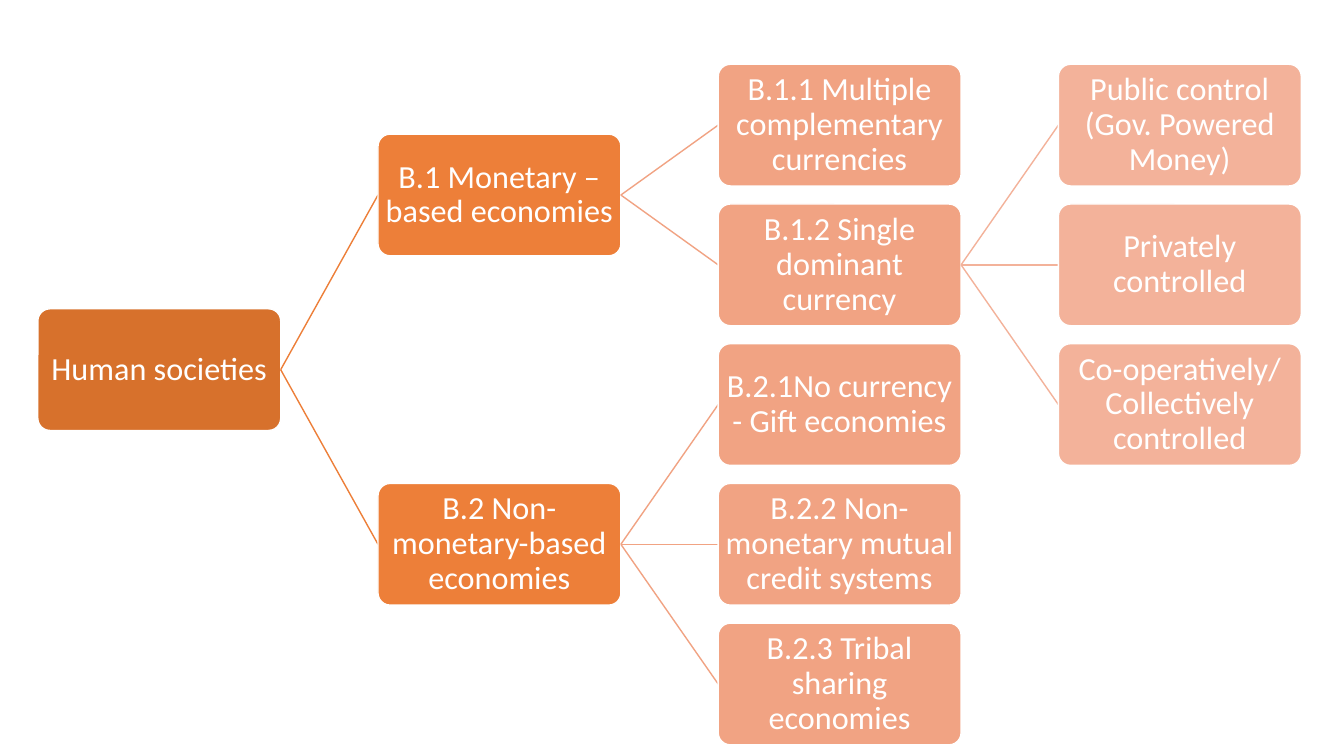
"""Build a slide with a tree of human societies by type of economy."""
from lxml.etree import SubElement
from pptx import Presentation
from pptx.dml.color import RGBColor
from pptx.enum.shapes import MSO_CONNECTOR as LINK, MSO_SHAPE as FORM
from pptx.enum.text import MSO_ANCHOR as ANCHOR, PP_ALIGN as ALIGN
from pptx.oxml.ns import qn
from pptx.util import Pt

WIDE, HIGH = 173.5, 86.9
LEFT, STEP = 27, 243
TOP, PITCH = 89.4, 99.8
FILLS = ["D7712C", "ED7F39", "F1A383", "F3B29A"]

# name: (text, column, row, parent)
NODES = {
    "root": ("Human societies", 0, 1.75, None),
    "B.1": ("B.1 Monetary –based economies", 1, 0.5, "root"),
    "B.1.1": ("B.1.1 Multiple complementary currencies", 2, 0, "B.1"),
    "B.1.2": ("B.1.2 Single dominant currency", 2, 1, "B.1"),
    "public": ("Public control (Gov. Powered Money)", 3, 0, "B.1.2"),
    "private": ("Privately controlled", 3, 1, "B.1.2"),
    "co-op": ("Co-operatively/ Collectively controlled", 3, 2, "B.1.2"),
    "B.2": ("B.2 Non-monetary-based economies", 1, 3, "root"),
    "B.2.1": ("B.2.1No currency - Gift economies", 2, 2, "B.2"),
    "B.2.2": ("B.2.2 Non-monetary mutual credit systems", 2, 3, "B.2"),
    "B.2.3": ("B.2.3 Tribal sharing economies", 2, 4, "B.2"),
}


def paint(color, code):
    color.rgb = RGBColor.from_string(code)


def place(col, row):
    return LEFT + col * STEP, TOP + row * PITCH


deck = Presentation()
deck.slide_width, deck.slide_height = Pt(960), Pt(540)
slide = deck.slides.add_slide(deck.slide_layouts[6])
shapes = slide.shapes

for text, col, row, up in NODES.values():
    x, mid = place(col, row)
    if up:
        px, pmid = place(*NODES[up][1:3])
        link = shapes.add_connector(
            LINK.STRAIGHT, Pt(px + WIDE), Pt(pmid), Pt(x), Pt(mid))
        link.line.width = Pt(1)
        paint(link.line.color, FILLS[col])
        SubElement(link._element.spPr, qn("a:effectLst"))

    box = shapes.add_shape(
        FORM.ROUNDED_RECTANGLE, Pt(x), Pt(mid - HIGH / 2), Pt(WIDE), Pt(HIGH))
    box.adjustments[0] = 0.1
    box.shadow.inherit = False
    box.fill.solid()
    paint(box.fill.fore_color, FILLS[col])
    box.line.width = Pt(1)
    paint(box.line.color, "FFFFFF")

    frame = box.text_frame
    frame.word_wrap = True
    frame.vertical_anchor = ANCHOR.MIDDLE
    frame.margin_left = frame.margin_right = Pt(1.4)
    frame.margin_top = frame.margin_bottom = Pt(1.4)
    para = frame.paragraphs[0]
    para.alignment = ALIGN.CENTER
    para.line_spacing = 0.9
    run = para.add_run()
    run.text = text
    run.font.name = "Calibri"
    run.font.size = Pt(23)
    paint(run.font.color, "FFFFFF")

deck.save("out.pptx")
